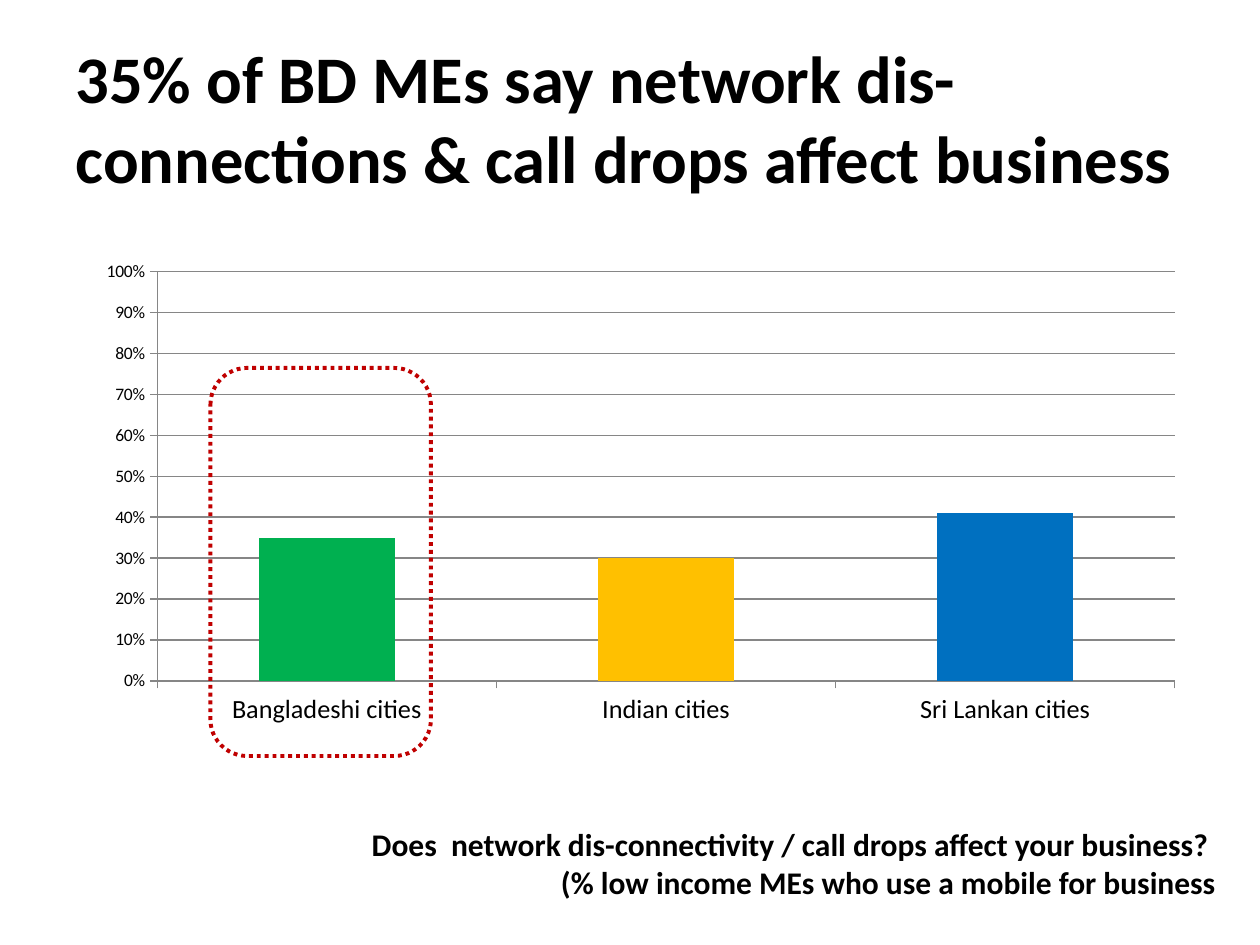
from pptx import Presentation
from pptx.chart.data import CategoryChartData
from pptx.dml.color import RGBColor
from pptx.enum.chart import XL_CHART_TYPE, XL_TICK_MARK
from pptx.enum.dml import MSO_LINE
from pptx.enum.shapes import MSO_SHAPE
from pptx.enum.text import MSO_ANCHOR, PP_ALIGN
from pptx.util import Inches, Pt

COLUMNS = XL_CHART_TYPE.COLUMN_CLUSTERED
TICK_OUT = XL_TICK_MARK.OUTSIDE
NO_TICK = XL_TICK_MARK.NONE
ROUNDED = MSO_SHAPE.ROUNDED_RECTANGLE
DOTTED = MSO_LINE.ROUND_DOT
MIDDLE, TOP = MSO_ANCHOR.MIDDLE, MSO_ANCHOR.TOP
LEFT, RIGHT = PP_ALIGN.LEFT, PP_ALIGN.RIGHT

FONT = "Calibri"
COLORS = {"text": "000000", "axis": "868686", "highlight": "C00000"}

TITLE = ["35% of BD MEs say network dis-connections & call drops affect business"]
QUESTION = [
    "Does  network dis-connectivity / call drops affect your business? ",
    "(% low income MEs who use a mobile for business",
]
CITIES = [
    ("Bangladeshi cities", 0.35, "00B050"),
    ("Indian cities", 0.30, "FFC000"),
    ("Sri Lankan cities", 0.41, "0070C0"),
]


def area(left, top, width, height):
    return Inches(left), Inches(top), Inches(width), Inches(height)


def style_font(font, size, bold=False):
    font.name = FONT
    font.size = Pt(size)
    font.bold = bold
    font.color.rgb = RGBColor.from_string(COLORS["text"])


def write_lines(frame, lines, size, align, anchor):
    frame.word_wrap = True
    frame.vertical_anchor = anchor
    for index, line in enumerate(lines):
        para = frame.paragraphs[0] if index == 0 else frame.add_paragraph()
        para.alignment = align
        span = para.add_run()
        span.text = line
        style_font(span.font, size, bold=True)


def style_line(line, color, width):
    line.color.rgb = RGBColor.from_string(COLORS[color])
    line.width = Pt(width)


def add_city_chart(page):
    names, shares, colors = zip(*CITIES)
    data = CategoryChartData(number_format="0%")
    data.categories = names
    data.add_series("Series 1", shares)
    chart = page.shapes.add_chart(COLUMNS, *area(0.67, 2, 8.83, 3.83), data).chart
    chart.has_legend = False
    chart.has_title = False
    style_font(chart.font, 10)

    plot = chart.plots[0]
    plot.gap_width = 150
    plot.vary_by_categories = False
    for index, color in enumerate(colors):
        fill = plot.series[0].points[index].format.fill
        fill.solid()
        fill.fore_color.rgb = RGBColor.from_string(color)

    for axis, size in ((chart.category_axis, 15), (chart.value_axis, 10)):
        axis.major_tick_mark = TICK_OUT
        axis.minor_tick_mark = NO_TICK
        style_font(axis.tick_labels.font, size)
        style_line(axis.format.line, "axis", 0.75)

    shares_axis = chart.value_axis
    shares_axis.minimum_scale = 0
    shares_axis.maximum_scale = 1
    shares_axis.major_unit = 0.1
    shares_axis.tick_labels.number_format = "0%"
    shares_axis.tick_labels.number_format_is_linked = False
    style_line(shares_axis.major_gridlines.format.line, "axis", 0.75)


deck = Presentation()
deck.slide_width, deck.slide_height = Inches(10), Inches(7.5)
page = deck.slides.add_slide(deck.slide_layouts[5])

title = page.shapes.title
title.left, title.top, title.width, title.height = area(0.5, 0.3, 9, 1.25)
write_lines(title.text_frame, TITLE, 38, LEFT, MIDDLE)

question = page.shapes.add_textbox(*area(1.42, 6.5, 8.33, 1.01))
write_lines(question.text_frame, QUESTION, 18, RIGHT, TOP)

add_city_chart(page)

highlight = page.shapes.add_shape(ROUNDED, *area(1.67, 2.92, 1.75, 3.08))
highlight.shadow.inherit = False
highlight.fill.background()
style_line(highlight.line, "highlight", 2.25)
highlight.line.dash_style = DOTTED

deck.save("out.pptx")
